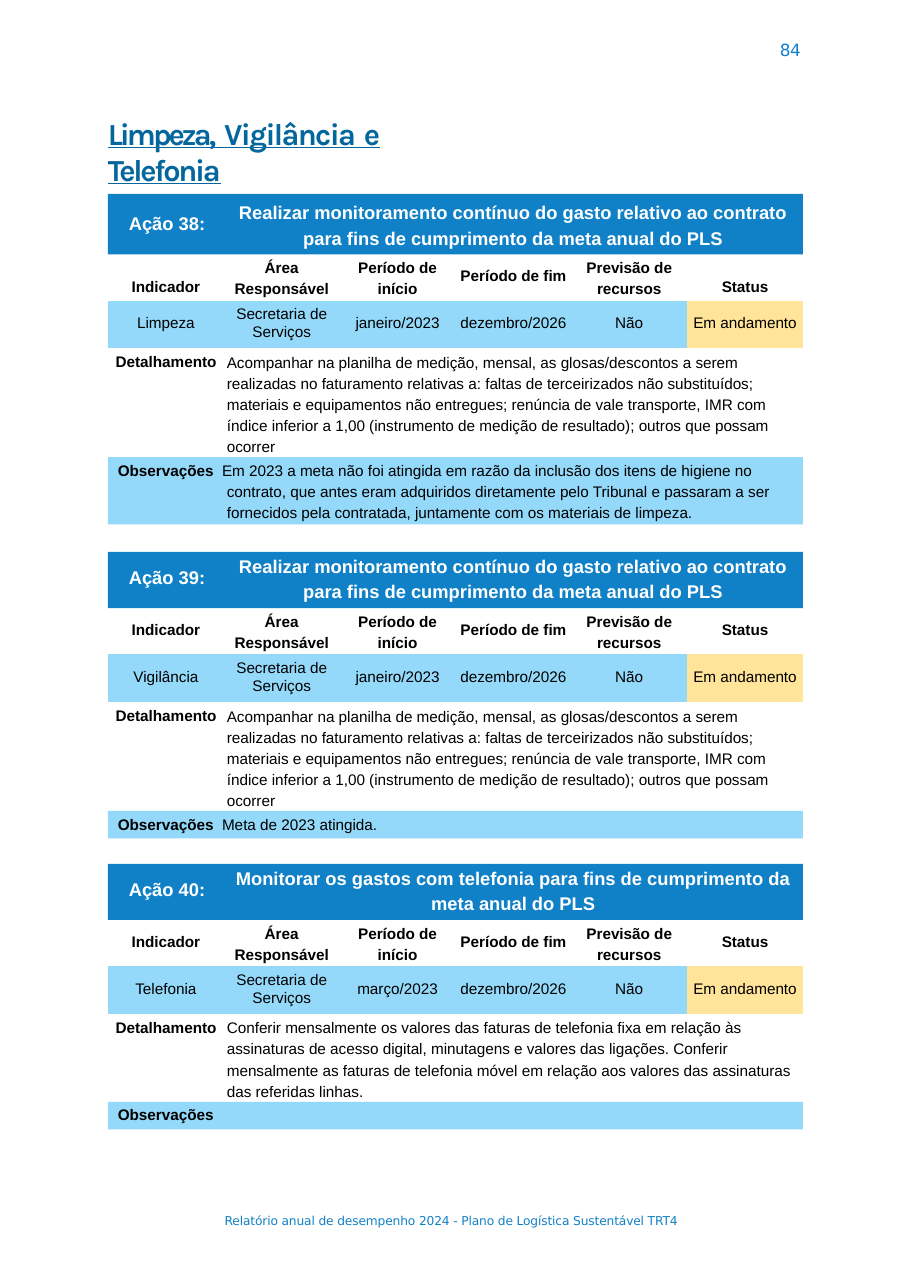
from dataclasses import dataclass

from pptx import Presentation
from pptx.dml.color import RGBColor as RGB
from pptx.enum.shapes import MSO_SHAPE as Form
from pptx.enum.text import MSO_ANCHOR as Anchor, MSO_AUTO_SIZE as Auto, PP_ALIGN as Align
from pptx.oxml.ns import qn
from pptx.shapes.base import BaseShape as Shape
from pptx.slide import Slide
from pptx.text.text import TextFrame as Frame
from pptx.util import Inches, Pt

HUES = {"bar": "1181C7", "head": "03679D", "row": "94D9F9", "state": "FFE499",
        "ink": "000000", "pale": "FFFFFF"}
PLAIN = "{2D5ABB26-0587-4C30-8999-92F81FD0307C}"  # table style without grid
LEFT, WIDTH = 0.98, 6.31
COL = WIDTH / 6


@dataclass
class Part:
    """A run of text with its letter spacing in points."""
    text: str
    gap: float = 0
    bold: bool | None = None


@dataclass
class Style:
    size: float = 10
    hue: str = "ink"
    bold: bool = False
    face: str = "Arial"
    align: Align = Align.LEFT
    line: float = 1
    under: bool = False


@dataclass
class Head:
    """A column heading, centred on its column."""
    text: str
    width: float
    lines: int = 1


@dataclass
class Action:
    base: float  # lower edge of the blue bar
    bar: float  # height of the blue bar
    code: str
    goal: str
    item: str
    start: str
    detail: str
    lines: int
    note: list[Part]
    deep: float  # height of the note band
    drop: float = 0.1  # offset of the outer headings


HEADS = [Head("Indicador", 0.65), Head("Área Responsável", 0.88, 2),
         Head("Período de início", 0.75, 2), Head("Período de fim", 0.99),
         Head("Previsão de recursos", 0.81, 2), Head("Status", 0.45)]

GOAL = ("Realizar monitoramento contínuo do gasto relativo ao contrato "
        "para fins de cumprimento da meta anual do PLS")
CHECK = ("Acompanhar na planilha de medição, mensal, as glosas/descontos a serem "
         "realizadas no faturamento relativas a: faltas de terceirizados não substituídos; "
         "materiais e equipamentos não entregues; renúncia de vale transporte, IMR com "
         "índice inferior a 1,00 (instrumento de medição de resultado); outros que possam "
         "ocorrer")
BILLS = ("Conferir mensalmente os valores das faturas de telefonia fixa em relação às "
         "assinaturas de acesso digital, minutagens e valores das ligações. Conferir "
         "mensalmente as faturas de telefonia móvel em relação aos valores das assinaturas "
         "das referidas linhas.")
MISSED = ("Em 2023 a meta não foi atingida em razão da inclusão dos itens de higiene no "
          "contrato, que antes eram adquiridos diretamente pelo Tribunal e passaram a ser "
          "fornecidos pela contratada, juntamente com os materiais de limpeza.")


def remark(text: str) -> list[Part]:
    return [Part(" ", 2.8), Part(text, bold=False)]


ACTIONS = [
    Action(2.31, 0.55, "38", GOAL, "Limpeza", "janeiro/2023", CHECK, 5,
           remark(MISSED), 0.61, 0.2),
    Action(5.52, 0.51, "39", GOAL, "Vigilância", "janeiro/2023", CHECK, 5,
           remark("Meta de 2023 atingida."), 0.25),
    Action(8.35, 0.51, "40", "Monitorar os gastos com telefonia para fins de cumprimento da "
           "meta anual do PLS", "Telefonia", "março/2023", BILLS, 4, [], 0.25),
]


def write(frame: Frame, parts: list[Part], style: Style) -> None:
    frame.word_wrap = True
    para = frame.paragraphs[0]
    para.alignment = style.align
    para.line_spacing = style.line
    para.space_before = Pt(0)
    font = para.font
    font.size, font.name = Pt(style.size), style.face
    font.bold, font.underline = style.bold, style.under
    font.color.rgb = RGB.from_string(HUES[style.hue])
    for part in parts:
        run = para.add_run()
        run.text = part.text
        if part.bold is not None:
            run.font.bold = part.bold
        if part.gap:
            run._r.get_or_add_rPr().set("spc", str(round(part.gap * 100)))


def pad(frame: Frame, left: float = 0, top: float = 0) -> None:
    frame.margin_left, frame.margin_top = Inches(left), Inches(top)
    frame.margin_right = frame.margin_bottom = 0
    frame.vertical_anchor = Anchor.TOP


def label(slide: Slide, x: float, y: float, w: float, h: float,
          parts: list[Part], style: Style) -> None:
    box = slide.shapes.add_textbox(Inches(x), Inches(y), Inches(w), Inches(h))
    pad(box.text_frame, 0.01 if style.align == Align.LEFT else 0, 0.02)
    write(box.text_frame, parts, style)


def band(slide: Slide, y: float, h: float, hue: str) -> Shape:
    rect = slide.shapes.add_shape(Form.RECTANGLE, Inches(LEFT), Inches(y),
                                  Inches(WIDTH), Inches(h))
    rect.shadow.inherit = False
    rect.fill.solid()
    rect.fill.fore_color.rgb = RGB.from_string(HUES[hue])
    rect.line.fill.background()
    return rect


def grid(slide: Slide, y: float, texts: list[str]) -> None:
    table = slide.shapes.add_table(1, len(texts), Inches(LEFT), Inches(y),
                                   Inches(WIDTH), Inches(0.43)).table
    table.first_row = table.horz_banding = False
    table._tbl.tblPr.find(qn("a:tableStyleId")).text = PLAIN
    for i, text in enumerate(texts):
        table.columns[i].width = Inches(COL)
        cell = table.cell(0, i)
        cell.margin_left = cell.margin_right = cell.margin_top = 0
        cell.margin_bottom = Inches(0.03)
        cell.vertical_anchor = Anchor.MIDDLE
        cell.fill.solid()
        hue = "state" if i == len(texts) - 1 else "row"
        cell.fill.fore_color.rgb = RGB.from_string(HUES[hue])
        write(cell.text_frame, [Part(text)], Style(align=Align.CENTER, line=1.07))


def draw(slide: Slide, act: Action) -> None:
    # Blue bar with code and goal
    white = Style(12, "pale", True, align=Align.CENTER, line=1.15)
    band(slide, act.base - act.bar, act.bar, "bar")
    label(slide, 1.16, act.base - 0.4, 0.71, 0.23, [Part(f"Ação {act.code}:")],
          Style(12, "pale", True))
    label(slide, 2.1, act.base - 0.53, 5.12, 0.47, [Part(act.goal)], white)

    # Column headings
    for i, head in enumerate(HEADS):
        outer = i in (0, len(HEADS) - 1)
        shift = 0 if head.lines > 1 else act.drop if outer else 0.1
        label(slide, LEFT + COL * (i + 0.5) - head.width / 2, act.base - 0.01 + shift,
              head.width, 0.2 * head.lines, [Part(head.text)],
              Style(bold=True, align=Align.CENTER, line=1.15 if head.lines > 1 else 1))

    # Values
    grid(slide, act.base + 0.42, [act.item, "Secretaria de Serviços", act.start,
                                  "dezembro/2026", "Não", "Em andamento"])

    # Detail and notes
    top, tall = act.base + 0.85, 0.19 * act.lines
    label(slide, 1.04, top + 0.02, 0.95, 0.19, [Part("Detalhamento")], Style(bold=True))
    label(slide, 2.05, top, 5.17, tall, [Part(act.detail)], Style(line=1.15))
    rect = band(slide, top + tall + 0.04, act.deep, "row")
    pad(rect.text_frame, 0, 0.01)
    write(rect.text_frame, [Part("Observações"), *act.note], Style(bold=True, line=1.15))
    props = rect.text_frame.paragraphs[0]._p.get_or_add_pPr()
    props.set("marL", str(Inches(1.08)))
    props.set("indent", str(Inches(-0.99)))


def main() -> None:
    deck = Presentation()
    deck.slide_width, deck.slide_height = Inches(8.28), Inches(11.69)
    slide = deck.slides.add_slide(deck.slide_layouts[5])

    # Heading
    title = slide.shapes.title
    title.left, title.top = Inches(0.97), Inches(1.02)
    title.width, title.height = Inches(3.47), Inches(0.36)
    pad(title.text_frame, 0.01, 0.02)
    title.text_frame.auto_size = Auto.NONE
    write(title.text_frame,
          [Part("Limpeza,", -2), Part(" ", -0.9), Part("Vigilância", -1.1),
           Part(" ", -0.9), Part("e", -2.2), Part(" ", -0.8), Part("Telefonia", -1.5)],
          Style(20, "head", True, "Karla", under=True))

    # Actions
    for act in ACTIONS:
        draw(slide, act)

    # Page number and footer
    label(slide, 7.07, 0.34, 0.23, 0.21, [Part("84", -0.2)], Style(11, "bar", face="DejaVu Sans"))
    label(slide, 2.03, 10.99, 4.2, 0.16,
          [Part("Relatório anual de desempenho 2024 - Plano de Logística Sustentável TRT4", -0.1)],
          Style(8, "bar", face="DejaVu Sans"))
    deck.save("out.pptx")


if __name__ == "__main__":
    main()
